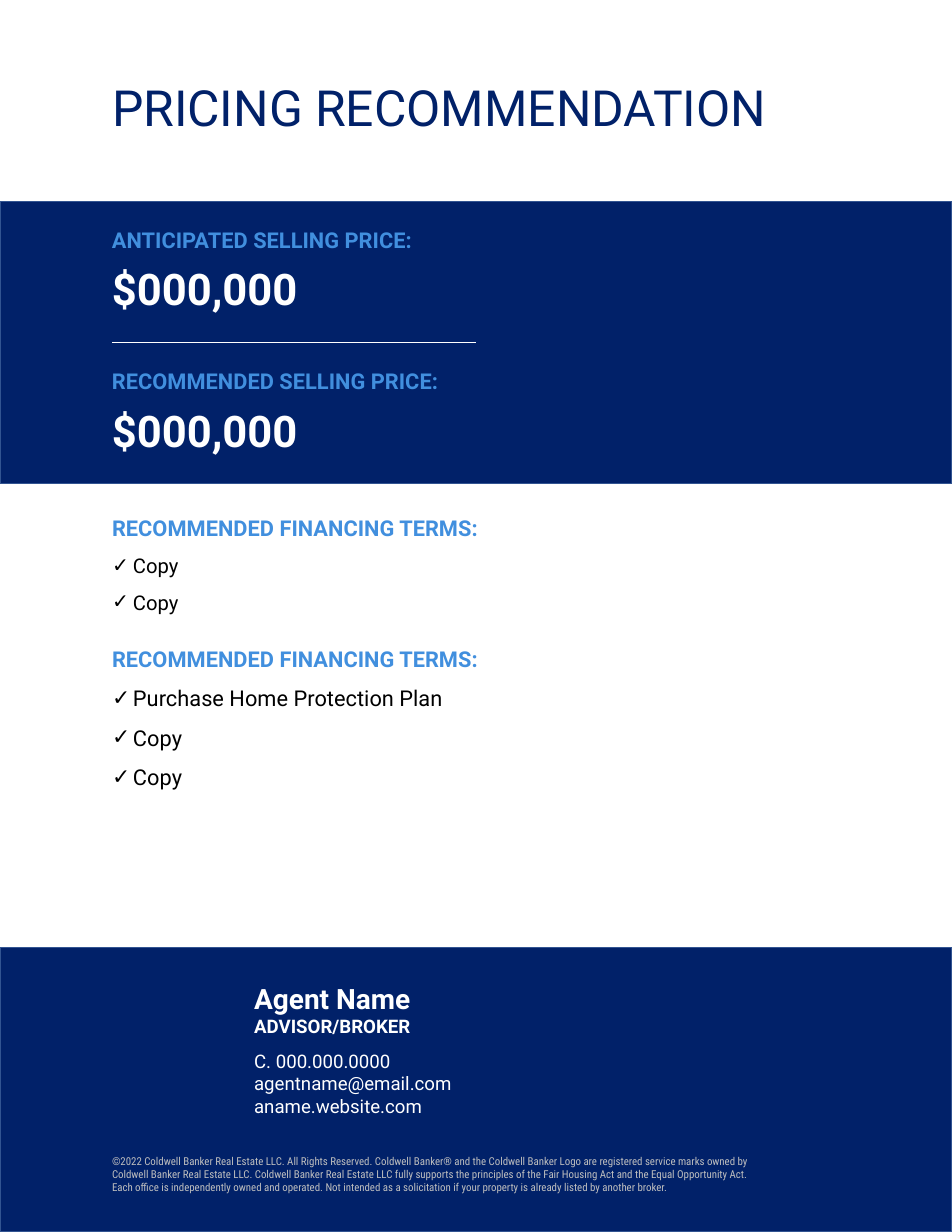
from lxml import etree
from pptx import Presentation
from pptx.dml.color import RGBColor
from pptx.enum import shapes, text
from pptx.oxml import ns
from pptx.util import Pt


class Theme:
    NAVY = RGBColor(0x01, 0x21, 0x69)
    EDGE = RGBColor(0x32, 0x54, 0x91)
    BLUE = RGBColor(0x41, 0x8F, 0xDE)
    WHITE = RGBColor(0xFF, 0xFF, 0xFF)
    BLACK = RGBColor(0, 0, 0)
    GREY = RGBColor(0xBF, 0xBF, 0xBF)
    FONT, FINE_FONT = "Roboto", "Roboto Condensed"
    TITLE, PRICE, NAME, HEAD, ITEM, CONTACT, FINE = 32, 28, 18, 14, 13, 12, 7


def place(sp, box, margins, anchor=text.MSO_ANCHOR.TOP):
    """Set position, insets (left, top, right, bottom) and anchor; return the text frame."""
    sp.left, sp.top, sp.width, sp.height = map(Pt, box)
    tf = sp.text_frame
    tf.word_wrap, tf.auto_size = True, text.MSO_AUTO_SIZE.NONE
    tf.vertical_anchor = anchor
    tf.margin_left, tf.margin_top, tf.margin_right, tf.margin_bottom = map(Pt, margins)
    return tf


def write(tf, words, size, color, bold=False, font=Theme.FONT, bullet=None,
          spacing=1.0, before=0, after=0, same=False):
    """Add a paragraph, or with same=True a new line in the last one."""
    p = tf.paragraphs[-1]
    if same:
        p.add_line_break()
    elif p.runs:
        p = tf.add_paragraph()
    if not p.runs:
        pPr = p._p.get_or_add_pPr()
        indent = Pt(13.5) if bullet else 0
        pPr.set("marL", str(indent))
        pPr.set("indent", str(-indent))
        bu = etree.SubElement(pPr, ns.qn("a:buChar" if bullet else "a:buNone"))
        if bullet:
            bu.set("char", bullet)
        p.alignment = text.PP_ALIGN.LEFT
        p.line_spacing = spacing
        p.space_before, p.space_after = Pt(before), Pt(after)
    r = p.add_run()
    r.text = words
    r.font.name, r.font.size, r.font.bold = font, Pt(size), bold
    r.font.color.rgb = color


prs = Presentation()
prs.slide_width, prs.slide_height = Pt(612), Pt(792)
s = prs.slides.add_slide(prs.slide_layouts[1])
title, body = s.placeholders[0], s.placeholders[1]
for sp in list(s.placeholders)[2:]:
    sp.element.getparent().remove(sp.element)

# Title
tf = place(title, (0, 0, 612, 129.6), (72, 49, 72, 18))
write(tf, "PRICING RECOMMENDATION", Theme.TITLE, Theme.NAVY)

# Price and agent bands
for top, height in ((129.6, 181.4), (609.1, 182.9)):
    band = s.shapes.add_shape(shapes.MSO_SHAPE.RECTANGLE, 0, Pt(top), Pt(612), Pt(height))
    band.shadow.inherit = False
    band.fill.solid()
    band.fill.fore_color.rgb = Theme.NAVY
    band.line.color.rgb = Theme.EDGE
    band.line.width = Pt(1)

# Prices
for i, label in enumerate(("ANTICIPATED SELLING PRICE:", "RECOMMENDED SELLING PRICE:")):
    top = 129.6 + i * 90.72
    tf = place(s.shapes.add_textbox(0, 0, 0, 0), (0, top, 612, 38.9), (72, 18, 0, 3.6))
    write(tf, label, Theme.HEAD, Theme.BLUE, bold=True, spacing=0.9)
    tf = place(s.shapes.add_textbox(0, 0, 0, 0), (0, top + 38.9, 612, 51.8),
               (72, 0, 0, 18), text.MSO_ANCHOR.BOTTOM)
    write(tf, "$000,000", Theme.PRICE, Theme.WHITE, bold=True)

divider = s.shapes.add_connector(shapes.MSO_CONNECTOR.STRAIGHT,
                                 Pt(72), Pt(220.3), Pt(306), Pt(220.3))
divider.line.color.rgb = Theme.WHITE
divider.line.width = Pt(1)
etree.SubElement(divider._element.spPr, ns.qn("a:effectLst"))

# Financing terms
tf = place(body, (0, 313.2, 612, 208.8), (72, 18, 0, 9.4))
sections = (
    (Theme.ITEM, 1.0, 0, ("Copy", "Copy")),
    (Theme.HEAD, 1.5, 12, ("Purchase Home Protection Plan", "Copy", "Copy")),
)
for size, spacing, before, items in sections:
    write(tf, "RECOMMENDED FINANCING TERMS:", Theme.HEAD, Theme.BLUE, bold=True,
          spacing=spacing, before=before)
    for item in items:
        write(tf, item, size, Theme.BLACK, bullet="✓", spacing=1.5)

# Agent
tf = place(s.shapes.add_textbox(0, 0, 0, 0), (145.4, 626.4, 302.4, 103), (18, 4.5, 54, 3.6))
write(tf, "Agent Name", Theme.NAME, Theme.WHITE, bold=True, after=8)
write(tf, "ADVISOR/BROKER", Theme.CONTACT, Theme.WHITE, bold=True, same=True)
for line in ("C. 000.000.0000", "agentname@email.com", "aname.website.com"):
    write(tf, line, Theme.CONTACT, Theme.WHITE)

# Copyright
tf = place(s.shapes.add_textbox(0, 0, 0, 0), (0, 730.1, 503.3, 61.9), (72, 12.4, 18, 18))
write(tf, "©2022 Coldwell Banker Real Estate LLC. All Rights Reserved. Coldwell Banker® and "
          "the Coldwell Banker Logo are registered service marks owned by Coldwell Banker "
          "Real Estate LLC. Coldwell Banker Real Estate LLC fully supports the principles of "
          "the Fair Housing Act and the Equal Opportunity Act. Each office is independently "
          "owned and operated. Not intended as a solicitation if your property is already "
          "listed by another broker.", Theme.FINE, Theme.GREY, font=Theme.FINE_FONT)

prs.save("out.pptx")
